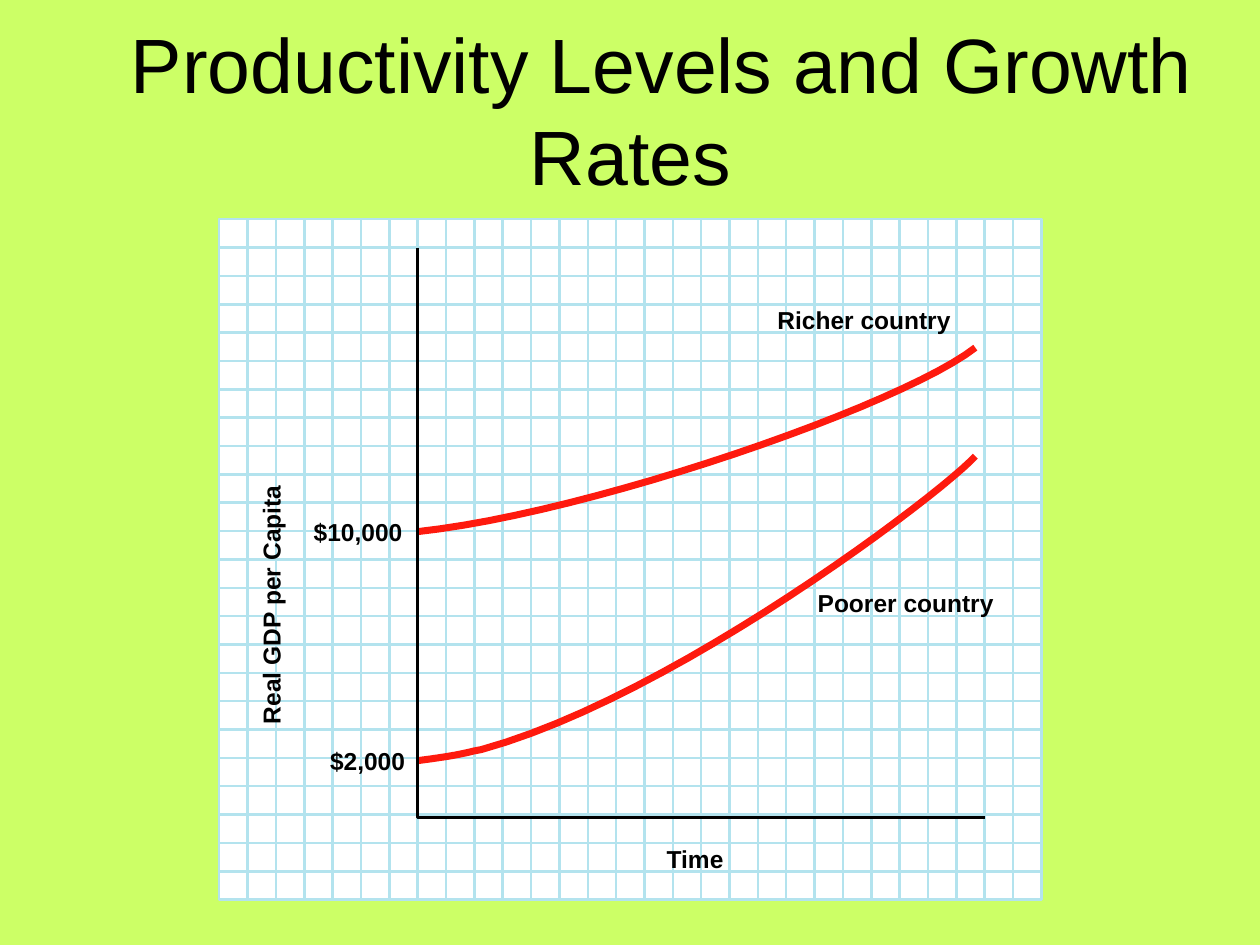
from dataclasses import dataclass

from lxml import etree
from pptx import Presentation
from pptx.dml.color import RGBColor
from pptx.enum.shapes import MSO_CONNECTOR, MSO_SHAPE
from pptx.enum.text import MSO_ANCHOR, MSO_AUTO_SIZE, PP_ALIGN
from pptx.oxml.ns import qn
from pptx.util import Inches, Pt

STRAIGHT = MSO_CONNECTOR.STRAIGHT
RECTANGLE = MSO_SHAPE.RECTANGLE
MIDDLE = MSO_ANCHOR.MIDDLE
NO_FIT, GROW = MSO_AUTO_SIZE.NONE, MSO_AUTO_SIZE.SHAPE_TO_FIT_TEXT
CENTER = PP_ALIGN.CENTER


@dataclass(frozen=True)
class Theme:
    font: str = "Arial"
    title_size: float = 44
    label_size: float = 14
    thin: float = 1.38
    thick: float = 4
    background: str = "CCFF66"
    title: str = "010000"
    ink: str = "000000"
    paper: str = "FFFFFF"
    rule: str = "B3E3EE"
    curve: str = "FE1A0E"


THEME = Theme()

# Graph paper: square cells counted from its top left corner
COLUMNS, ROWS = 29, 24
CELL = 0.225
PAPER_LEFT = PAPER_TOP = 1.74
AXIS_COLUMN, AXIS_TOP, AXIS_ROW, AXIS_END = 7, 1, 21.1, 27
CURVE_STEPS = 24

# Each curve: a start point, then Bezier pieces of two controls and an end
POORER_CURVE = ((7, 19.1), [
    ((7.6, 19.02), (8.31, 18.93), (8.98, 18.76)),
    ((9.24, 18.71), (9.24, 18.71), (9.24, 18.71)),
    ((16.09, 16.84), (25.56, 9.6), (26.67, 8.36)),
])
RICHER_CURVE = ((7, 11.02), [((13.16, 10.36), (24.13, 6.53), (26.67, 4.53))])

# Label text, column, row, width in cells, rotation
LABELS = [
    ("Poorer country", 21.11, 13.02, 6.4, 0),
    ("Richer country", 19.69, 3.02, 6.31, 0),
    ("Real GDP per Capita", -2.49, 12.98, 8.62, 270),
    ("Time", 15.78, 22.04, 2.27, 0),
    ("$10,000", 3.33, 10.49, 3.33, 0),
    ("$2,000", 3.91, 18.58, 2.89, 0),
]
LABEL_ROWS = 1.03


def color(code):
    return RGBColor.from_string(code)


def place(column, row):
    """Turn a grid position into a position on the page."""
    return Inches(PAPER_LEFT + column * CELL), Inches(PAPER_TOP + row * CELL)


def write(para, text, size, ink, bold=False):
    span = para.add_run()
    span.text = text
    span.font.name, span.font.size = THEME.font, Pt(size)
    span.font.bold = bold
    span.font.color.rgb = color(ink)


def set_line(shape, ink, width):
    shape.line.color.rgb = color(ink)
    shape.line.width = Pt(width)


def add_title(page, text):
    box = page.shapes.title
    box.left, box.top = Inches(0.25), Inches(0.24)
    box.width, box.height = Inches(9.51), Inches(1.25)
    frame = box.text_frame
    frame.auto_size, frame.vertical_anchor = NO_FIT, MIDDLE
    para = frame.paragraphs[0]
    para.alignment = CENTER
    write(para, text, THEME.title_size, THEME.title)
    # First-line indent
    properties = para._p.get_or_add_pPr()
    properties.set("marL", "0")
    properties.set("indent", str(Inches(0.5)))


def add_sheet(graph):
    sheet = graph.add_shape(RECTANGLE, *place(0, 0),
                            Inches(COLUMNS * CELL), Inches(ROWS * CELL))
    sheet.shadow.inherit = False
    sheet.fill.solid()
    sheet.fill.fore_color.rgb = color(THEME.paper)
    set_line(sheet, THEME.rule, THEME.thin)


def add_rule(graph, start, end):
    rule = graph.add_connector(STRAIGHT, *place(*start), *place(*end))
    set_line(rule, THEME.rule, THEME.thin)
    etree.SubElement(rule._element.spPr, qn("a:effectLst"))


def add_outline(graph, points, ink, width):
    first, *rest = [place(*point) for point in points]
    builder = graph.build_freeform(*first)
    builder.add_line_segments(rest, close=False)
    outline = builder.convert_to_shape()
    outline.shadow.inherit = False
    outline.fill.background()
    set_line(outline, ink, width)


def trace(start, pieces):
    """List points along a chain of cubic Bezier pieces."""
    points = [start]
    for first, second, end in pieces:
        for step in range(1, CURVE_STEPS + 1):
            t = step / CURVE_STEPS
            weights = ((1 - t) ** 3, 3 * t * (1 - t) ** 2, 3 * t * t * (1 - t), t ** 3)
            corners = (start, first, second, end)
            points.append(tuple(sum(w * corner[axis] for w, corner in zip(weights, corners))
                                for axis in (0, 1)))
        start = end
    return points


def add_label(graph, text, column, row, width, rotation):
    box = graph.add_textbox(*place(column, row),
                            Inches(width * CELL), Inches(LABEL_ROWS * CELL))
    box.rotation = rotation
    frame = box.text_frame
    frame.margin_left = frame.margin_right = frame.margin_top = frame.margin_bottom = 0
    frame.word_wrap, frame.auto_size = False, GROW
    write(frame.paragraphs[0], text, THEME.label_size, THEME.ink, bold=True)


def main():
    deck = Presentation()
    deck.slide_width, deck.slide_height = Inches(10), Inches(7.5)
    page = deck.slides.add_slide(deck.slide_layouts[5])
    page.background.fill.solid()
    page.background.fill.fore_color.rgb = color(THEME.background)
    add_title(page, "Productivity Levels and Growth Rates")

    # Graph paper
    graph = page.shapes.add_group_shape().shapes
    add_sheet(graph)
    for row in range(1, ROWS):
        add_rule(graph, (0, row), (COLUMNS, row))
    for column in range(1, COLUMNS):
        add_rule(graph, (column, 0), (column, ROWS))

    # Curves, axes and labels
    for curve in (POORER_CURVE, RICHER_CURVE):
        add_outline(graph, trace(*curve), THEME.curve, THEME.thick)
    axes = [(AXIS_COLUMN, AXIS_TOP), (AXIS_COLUMN, AXIS_ROW), (AXIS_END, AXIS_ROW)]
    add_outline(graph, axes, THEME.ink, THEME.thin)
    for label in LABELS:
        add_label(graph, *label)

    deck.save("out.pptx")


if __name__ == "__main__":
    main()
